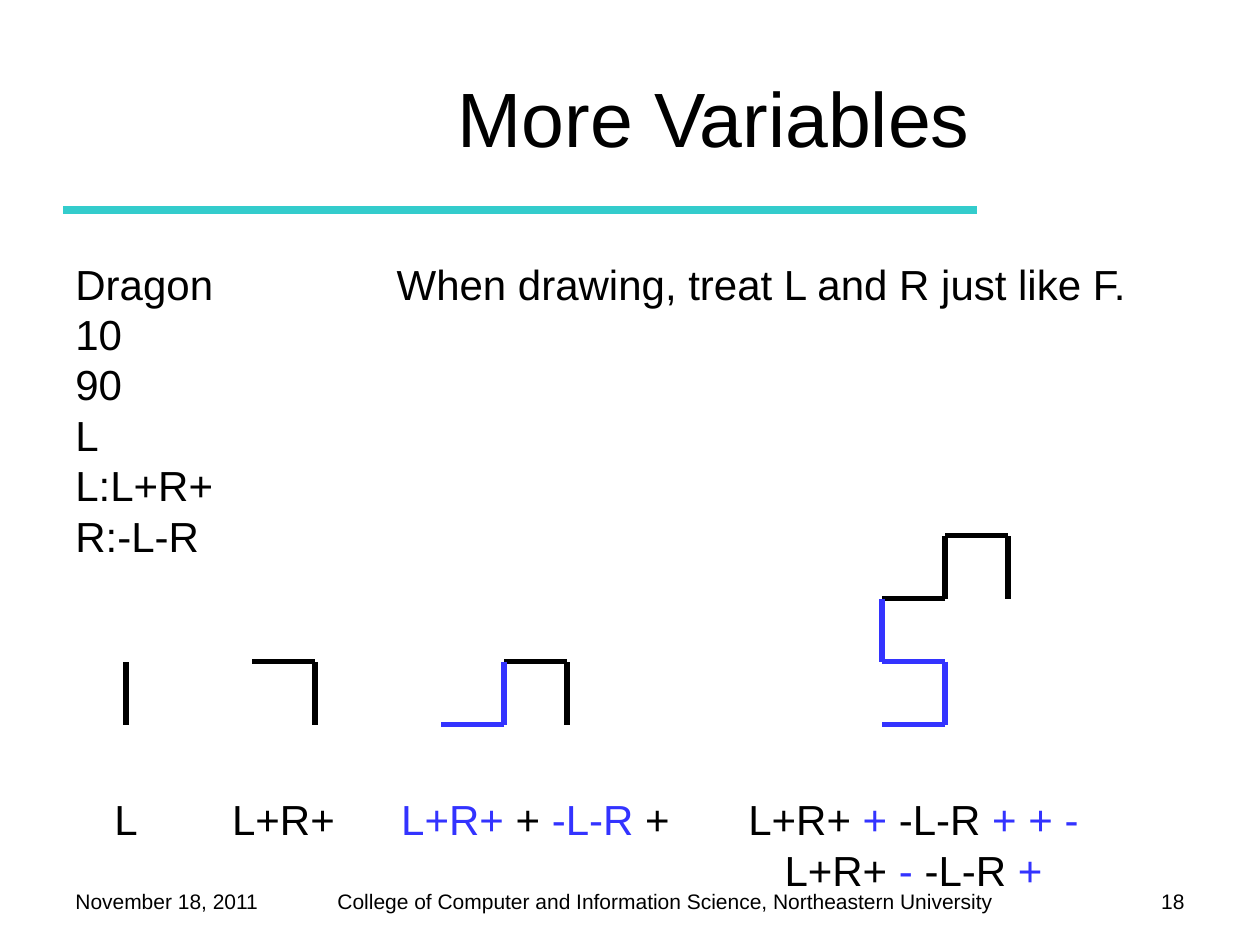
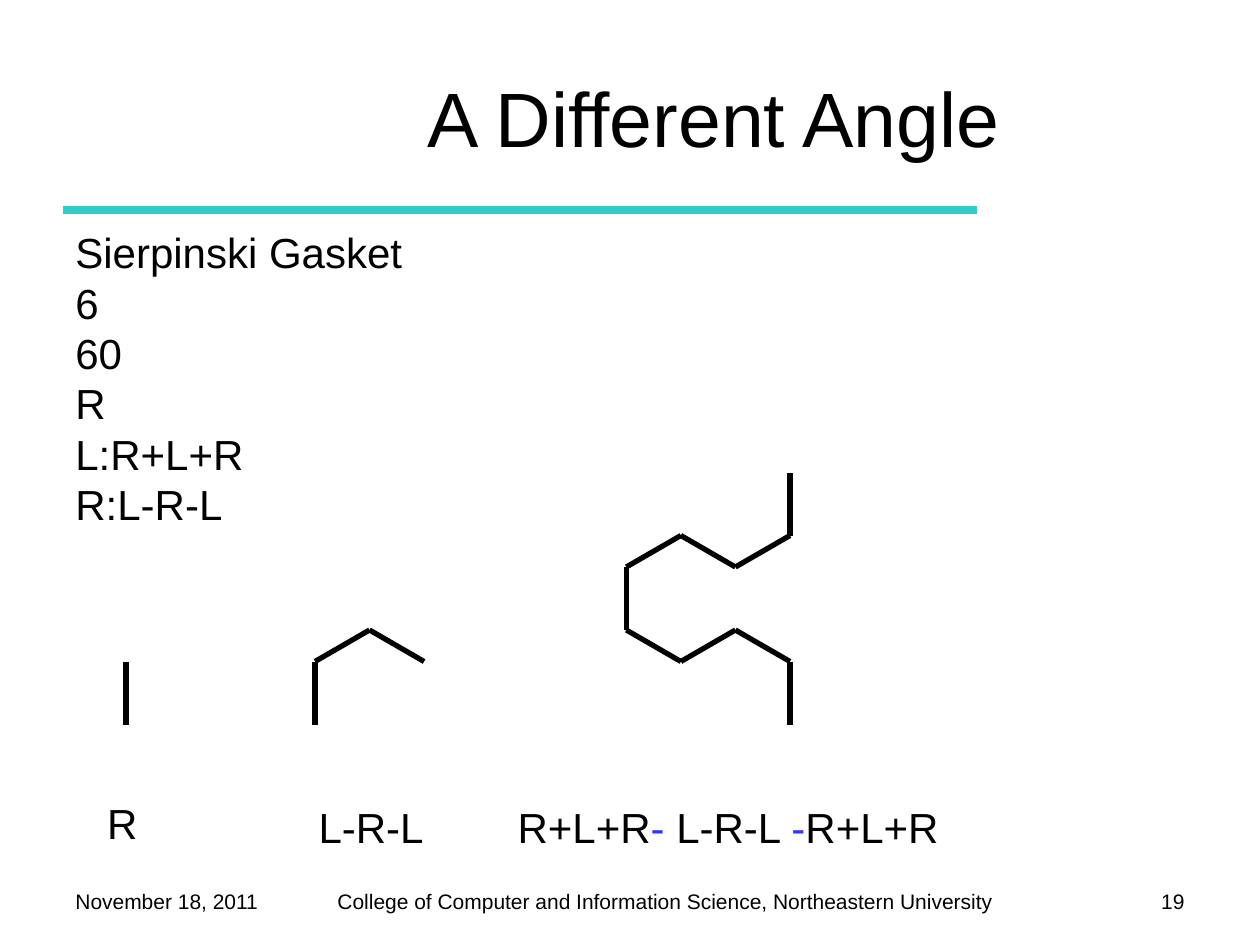
from math import cos, radians, sin
from lxml.etree import SubElement
from pptx import Presentation
from pptx.dml.color import RGBColor as Rgb
from pptx.enum.shapes import MSO_CONNECTOR as Conn
from pptx.enum.text import MSO_ANCHOR as Anchor, PP_ALIGN as Align
from pptx.oxml.ns import qn
from pptx.util import Inches, Pt

FONT = "Arial"
HUES = {"ink": "000000", "mark": "3333FF", "rule": "33CCCC"}
DATE = "November 18, 2011"
SCHOOL = "College of Computer and Information Science, Northeastern University"
STEP = 0.5
TAB = 2.55

# A "|" in a label switches between ink and mark; "marked" is the first marked stroke.
SLIDES = [
    {
        "title": "More Variables", "page": 18, "top": 2, "angle": 90,
        "rules": ["Dragon\tWhen drawing, treat L and R just like F.",
                  "10", "90", "L", "L:L+R+", "R:-L-R"],
        "curves": [
            {"label": "L", "box": (0.5, 6.25, 1, 0.5), "start": (1, 5.75)},
            {"label": "L+R+", "box": (1.5, 6.25, 1.5, 0.5), "start": (2.5, 5.75)},
            {"label": "|L+R+| + |-L-R| +", "box": (3, 6.25, 2.5, 0.5),
             "start": (4.5, 5.75), "marked": 2},
            {"label": "L+R+ |+ |-L-R |+ + - |L+R+ |- |-L-R |+",
             "box": (5.5, 6.25, 3.5, 0.9), "start": (8, 4.75), "marked": 4},
        ],
    },
    {
        "title": "A Different Angle", "page": 19, "top": 1.75, "angle": 60,
        "rules": ["Sierpinski Gasket", "6", "60", "R", "L:R+L+R", "R:L-R-L"],
        "curves": [
            {"label": "R", "box": (0.59, 6.28, 0.76, 0.5), "start": (1, 5.75)},
            {"label": "L-R-L", "box": (2.43, 6.31, 1.1, 0.5),
             "start": (2.5, 5.75), "align": Align.LEFT},
            {"label": "R+L+R|- |L-R-L |-|R+L+R", "box": (4.01, 6.31, 3.8, 0.5),
             "start": (6.27, 5.75), "align": Align.LEFT},
        ],
    },
]


def color(name):
    return Rgb.from_string(HUES[name])


def style(font, size, hue="ink"):
    font.name = FONT
    font.size = Pt(size)
    font.color.rgb = color(hue)


def add_box(slide, box):
    frame = slide.shapes.add_textbox(*map(Inches, box)).text_frame
    frame.word_wrap = True
    return frame


def add_text(slide, box, lines, size, align=Align.LEFT):
    frame = add_box(slide, box)
    for i, line in enumerate(lines):
        para = frame.add_paragraph() if i else frame.paragraphs[0]
        para.text = line
        if "\t" in line:
            tabs = SubElement(para._p.get_or_add_pPr(), qn("a:tabLst"))
            SubElement(tabs, qn("a:tab"), pos=str(Inches(TAB)), algn="l")
        para.alignment = align
        style(para.font, size)


def add_label(slide, box, label, align):
    para = add_box(slide, box).paragraphs[0]
    para.alignment = align
    for i, part in enumerate(label.split("|")):
        if part:
            run = para.add_run()
            run.text = part
            style(run.font, 24, "mark" if i % 2 else "ink")


def add_line(slide, start, end, hue, width):
    line = slide.shapes.add_connector(
        Conn.STRAIGHT, *map(Inches, (*start, *end)))
    line.line.color.rgb = color(hue)
    line.line.width = Pt(width)
    SubElement(line._element.spPr, qn("a:effectLst"))


def draw_curve(slide, label, start, angle, marked=None):
    turn, count, (x, y) = 90, 0, start
    for sign in label:
        if sign == "+":
            turn += angle
        elif sign == "-":
            turn -= angle
        elif sign in "LR":
            end = x + STEP * cos(radians(turn)), y - STEP * sin(radians(turn))
            late = marked is not None and count >= marked
            add_line(slide, (x, y), end, "mark" if late else "ink", 3)
            (x, y), count = end, count + 1


def add_frame(deck, title, page):
    slide = deck.slides.add_slide(deck.slide_layouts[5])
    head = slide.shapes.title
    head.left, head.top, head.width, head.height = map(
        Inches, (1.83, 0.3, 7.67, 1.25))
    head.text_frame.text = title
    head.text_frame.vertical_anchor = Anchor.MIDDLE
    para = head.text_frame.paragraphs[0]
    para.alignment = Align.CENTER
    style(para.font, 44)
    add_line(slide, (0.5, 1.67), (7.75, 1.67), "rule", 4.5)
    add_text(slide, (2.58, 7, 5.5, 0.3), [SCHOOL], 12)
    add_text(slide, (0.5, 7, 1.75, 0.33), [DATE], 12)
    add_text(slide, (8.67, 7, 0.83, 0.35), [str(page)], 12, Align.RIGHT)
    return slide


def main():
    deck = Presentation()
    deck.slide_width, deck.slide_height = Inches(10), Inches(7.5)
    for item in SLIDES:
        slide = add_frame(deck, item["title"], item["page"])
        add_text(slide, (0.5, item["top"], 9, 2.5), item["rules"], 24)
        for curve in item["curves"]:
            add_label(slide, curve["box"], curve["label"],
                      curve.get("align", Align.CENTER))
            draw_curve(slide, curve["label"], curve["start"],
                       item["angle"], curve.get("marked"))
    deck.save("out.pptx")


if __name__ == "__main__":
    main()
